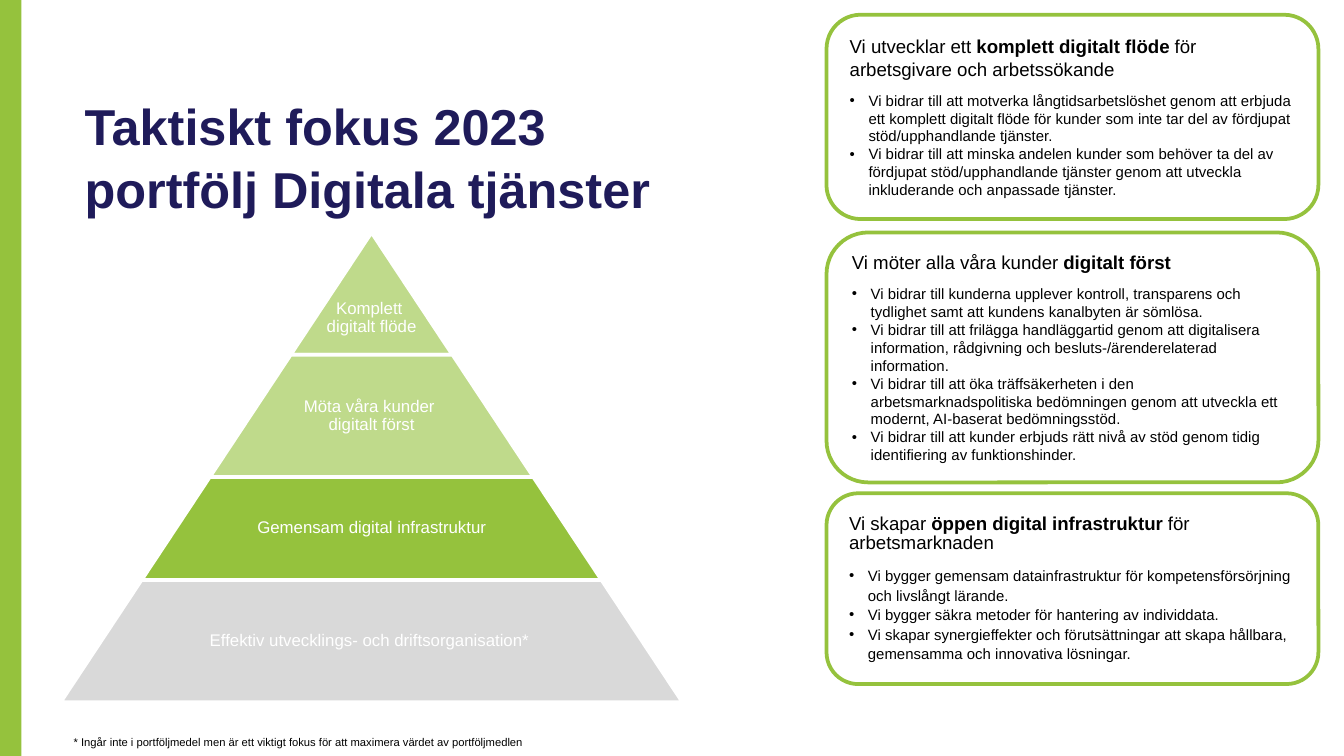
from lxml.etree import SubElement
from pptx import Presentation
from pptx.dml.color import RGBColor
from pptx.enum.shapes import MSO_SHAPE as Shape
from pptx.enum.text import MSO_ANCHOR as Anchor, MSO_AUTO_SIZE as AutoSize, PP_ALIGN as Align
from pptx.oxml.ns import qn
from pptx.util import Inches, Pt

GREEN, LIGHT_GREEN, GREY = "95C23D", "BFDA8B", "D9D9D9"
NAVY, BLACK, WHITE = "1F1B5A", "000000", "FFFFFF"

# Content
TITLE = "Taktiskt fokus 2023 \vportfölj Digitala tjänster"
FOOTNOTE = ("* Ingår inte i portföljmedel men är ett viktigt fokus för att "
            "maximera värdet av portföljmedlen")

# Pyramid levels: text, fill, height, text width as share of the level
LEVELS = [
    ("Komplett \vdigitalt flöde", LIGHT_GREEN, 0.91, 1),
    ("Möta våra kunder \vdigitalt först", LIGHT_GREEN, 0.91, 0.65),
    ("Gemensam digital infrastruktur", GREEN, 0.765, 0.65),
    ("Effektiv utvecklings- och driftsorganisation* ", GREY, 0.91, 0.65),
]

# Focus boxes: heading parts (every second one is bold) and bullets
BOXES = [
    {"top": 0.11, "height": 1.52, "spacing": None,
     "heading": ["Vi utvecklar ett ", "komplett digitalt flöde",
                 " för arbetsgivare och arbetssökande"],
     "bullets": [
         "Vi bidrar till att motverka långtidsarbetslöshet genom att erbjuda ett komplett "
         "digitalt flöde för kunder som inte tar del av fördjupat stöd/upphandlande tjänster.",
         "Vi bidrar till att minska andelen kunder som behöver ta del av fördjupat "
         "stöd/upphandlande tjänster genom att utveckla inkluderande och anpassade tjänster."]},
    {"top": 1.73, "height": 1.86, "spacing": None,
     "heading": ["Vi möter alla våra kunder ", "digitalt först"],
     "bullets": [
         "Vi bidrar till kunderna upplever kontroll, transparens och tydlighet samt att "
         "kundens kanalbyten är sömlösa.",
         "Vi bidrar till att frilägga handläggartid genom att digitalisera information, "
         "rådgivning och besluts-/ärenderelaterad information.",
         "Vi bidrar till att öka träffsäkerheten i den arbetsmarknadspolitiska bedömningen "
         "genom att utveckla ett modernt, AI-baserat bedömningsstöd.",
         "Vi bidrar till att kunder erbjuds rätt nivå av stöd genom tidig identifiering "
         "av funktionshinder."]},
    {"top": 3.67, "height": 1.42, "spacing": Pt(10.5),
     "heading": ["Vi skapar ", "öppen digital infrastruktur ", "för arbetsmarknaden"],
     "bullets": [
         "Vi bygger gemensam datainfrastruktur för kompetensförsörjning och livslångt lärande.",
         "Vi bygger säkra metoder för hantering av individdata.",
         "Vi skapar synergieffekter och förutsättningar att skapa hållbara, gemensamma och "
         "innovativa lösningar."]},
]

# Layout in inches
BOX_LEFT, BOX_WIDTH = 6.15, 3.66
PYRAMID_CENTRE, PYRAMID_TOP, SLOPE = 2.765, 1.73, 0.662
BULLET_INDENT = Inches(0.14)


def colour(value):
    return RGBColor.from_string(value)


def add_block(slide, kind, area, fill, line=None):
    shape = slide.shapes.add_shape(kind, *map(Inches, area))
    shape.shadow.inherit = False
    shape.fill.solid()
    shape.fill.fore_color.rgb = colour(fill)
    if line:
        shape.line.color.rgb = colour(line)
        shape.line.width = Pt(2)
    else:
        shape.line.fill.background()
    return shape


def write(paragraph, *parts, size, color=BLACK, bold=False, align=Align.LEFT,
          spacing=None, after=0, bullet=False):
    """Write text parts, making every second part bold."""
    if bullet:
        properties = paragraph._p.get_or_add_pPr()
        properties.set("marL", str(BULLET_INDENT))
        properties.set("indent", str(-BULLET_INDENT))
        SubElement(properties, qn("a:buFont"), typeface="Arial")
        SubElement(properties, qn("a:buChar"), char="•")
    paragraph.alignment = align
    paragraph.line_spacing = spacing
    paragraph.space_after = Pt(after)
    for index, part in enumerate(parts):
        first_run = len(paragraph.runs)
        for number, text in enumerate(part.split("\v")):
            if number:
                paragraph.add_line_break()
            paragraph.add_run().text = text
        for run in paragraph.runs[first_run:]:
            run.font.name = "Arial"
            run.font.size = Pt(size)
            run.font.bold = bold or index % 2 == 1
            run.font.color.rgb = colour(color)


def set_frame(frame, anchor, inset=0, wrap=True):
    frame.word_wrap = wrap
    frame.auto_size = AutoSize.NONE
    frame.vertical_anchor = anchor
    frame.margin_left = frame.margin_right = Inches(inset)
    frame.margin_top = frame.margin_bottom = Inches(inset)


def add_pyramid(slide):
    base = 0
    for number, (text, fill, height, share) in enumerate(LEVELS):
        top = PYRAMID_TOP + base
        base += height
        width = 2 * SLOPE * base
        level = add_block(slide, Shape.TRAPEZOID,
                          (PYRAMID_CENTRE - width / 2, top, width, height), fill, WHITE)
        level.adjustments[0] = SLOPE
        label_width = width * share
        label = slide.shapes.add_textbox(*map(Inches, (
            PYRAMID_CENTRE - label_width / 2, top, label_width, height)))
        frame = label.text_frame
        set_frame(frame, Anchor.MIDDLE if number else Anchor.BOTTOM, inset=0.01)
        if number == 0:
            frame.margin_bottom = Inches(0.14)
        write(frame.paragraphs[0], text, size=9, color=WHITE, align=Align.CENTER, spacing=0.9)


def add_focus_box(slide, box):
    shape = add_block(slide, Shape.ROUNDED_RECTANGLE,
                      (BOX_LEFT, box["top"], BOX_WIDTH, box["height"]), WHITE, GREEN)
    frame = shape.text_frame
    frame.word_wrap = True
    frame.vertical_anchor = Anchor.MIDDLE
    write(frame.paragraphs[0], *box["heading"], size=10, after=6, spacing=box["spacing"])
    for text in box["bullets"]:
        write(frame.add_paragraph(), text, size=8, spacing=box["spacing"], bullet=True)


def main():
    presentation = Presentation()
    presentation.slide_width, presentation.slide_height = Inches(10), Inches(5.625)
    slide = presentation.slides.add_slide(presentation.slide_layouts[5])

    # Side bar
    add_block(slide, Shape.RECTANGLE, (0, 0, 0.16, 5.625), GREEN)

    # Title
    title = slide.shapes.title
    title.left, title.top, title.width, title.height = map(Inches, (0.63, 0.89, 8.12, 0.74))
    set_frame(title.text_frame, Anchor.BOTTOM)
    write(title.text_frame.paragraphs[0], TITLE, size=27, color=NAVY, bold=True, spacing=1.05)

    add_pyramid(slide)
    for box in BOXES:
        add_focus_box(slide, box)

    # Footnote
    footnote = slide.shapes.add_textbox(*map(Inches, (0.45, 5.42, 3.58, 0.2)))
    footnote.text_frame.word_wrap = False
    write(footnote.text_frame.paragraphs[0], FOOTNOTE, size=6)

    presentation.save("out.pptx")


if __name__ == "__main__":
    main()
